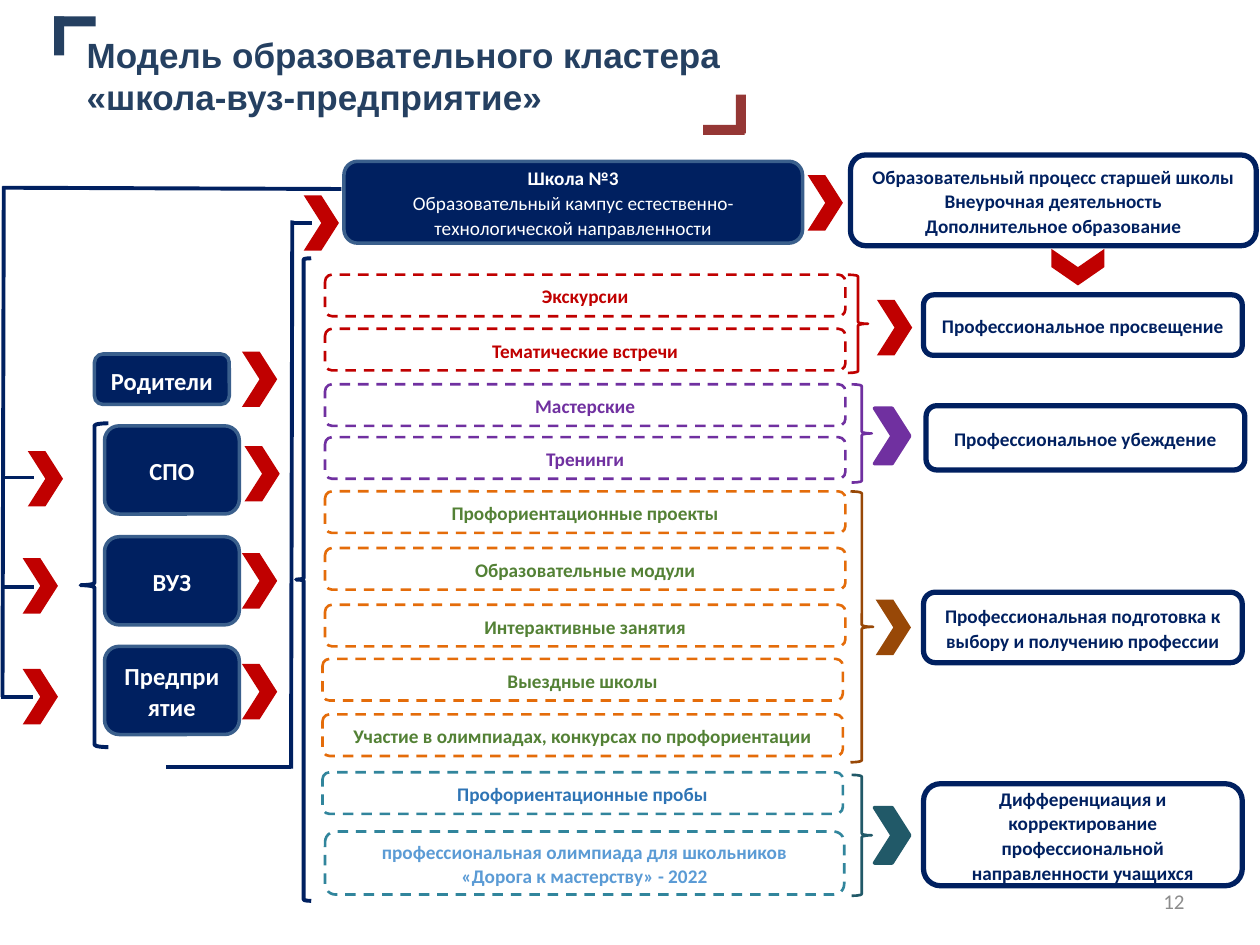
from pptx import Presentation
from pptx.dml.color import RGBColor
from pptx.enum.dml import MSO_LINE_DASH_STYLE as Dash
from pptx.enum.shapes import MSO_CONNECTOR, MSO_SHAPE as Shape
from pptx.enum.text import MSO_ANCHOR as Anchor, PP_ALIGN as Align
from pptx.oxml.ns import qn
from pptx.util import Inches, Pt

NAVY, BORDER, RED, PURPLE = "002060", "3A5F8C", "C00000", "7030A0"
ORANGE, BROWN, GREEN = "E46C0A", "984807", "538135"
TEAL, DARK_TEAL, BLUE, SKY = "31859C", "215968", "2E74B5", "5B9BD5"
WHITE, SLATE, MAROON, GRAY = "FFFFFF", "254061", "953735", "8C8C8C"

ACTIVITIES = [
    (2.58, 2.18, "Экскурсии", RED, RED),
    (2.58, 2.61, "Тематические встречи", RED, RED),
    (2.58, 3.05, "Мастерские", PURPLE, PURPLE),
    (2.58, 3.47, "Тренинги", PURPLE, PURPLE),
    (2.58, 3.9, "Профориентационные проекты", ORANGE, GREEN),
    (2.58, 4.35, "Образовательные модули", ORANGE, GREEN),
    (2.58, 4.8, "Интерактивные занятия", ORANGE, GREEN),
    (2.56, 5.23, "Выездные школы", ORANGE, GREEN),
    (2.56, 5.67, "Участие в олимпиадах, конкурсах по профориентации", ORANGE, GREEN),
    (2.56, 6.13, "Профориентационные пробы", TEAL, BLUE),
]
PARTNERS = [
    (0.75, 2.81, 0.4, "Родители"),
    (0.83, 3.38, 0.7, "СПО"),
    (0.83, 4.26, 0.7, "ВУЗ"),
    (0.83, 5.13, 0.7, "Предприятие"),
]
RESULTS = [
    (7.33, 2.34, 2.53, 0.48, ["Профессиональное просвещение"]),
    (7.35, 3.22, 2.53, 0.51, ["Профессиональное убеждение"]),
    (7.33, 4.7, 2.53, 0.56, ["Профессиональная подготовка к выбору и получению профессии"]),
    (7.33, 6.22, 2.53, 0.81,
     ["Дифференциация и корректирование профессиональной направленности учащихся"]),
    (6.75, 1.23, 3.22, 0.72, ["Образовательный процесс старшей школы",
                              "Внеурочная деятельность", "Дополнительное образование"]),
]
BRACES = [
    (Shape.LEFT_BRACE, 2.35, 2.05, 0.12, 5.1, NAVY, 2.25),
    (Shape.LEFT_BRACE, 0.64, 3.36, 0.22, 2.57, NAVY, 2.25),
    (Shape.RIGHT_BRACE, 6.73, 2.18, 0.16, 0.78, RED, 1.5),
    (Shape.RIGHT_BRACE, 6.76, 3.05, 0.16, 0.78, PURPLE, 1.5),
    (Shape.RIGHT_BRACE, 6.75, 3.9, 0.18, 2.15, BROWN, 1.5),
    (Shape.RIGHT_BRACE, 6.76, 6.15, 0.16, 0.96, DARK_TEAL, 1.5),
]
RED_CHEVRONS = [
    (1.92, 2.79), (1.94, 3.54), (1.92, 4.39), (1.92, 5.27), (0.22, 3.58),
    (0.18, 4.43), (0.18, 5.31), (2.41, 1.55), (6.41, 1.39), (6.96, 2.38),
]
LINES = [
    (0.03, 3.79, 0.27, 3.79), (0.02, 4.66, 0.27, 4.66), (0.01, 5.53, 0.26, 5.53),
    (2.71, 1.5, 0.02, 1.49), (0.03, 1.48, 0.02, 5.53), (1.32, 6.09, 2.31, 6.09),
    (2.32, 1.75, 2.31, 6.1), (2.31, 1.77, 2.48, 1.77),
]
CORNERS = [
    (0.43, 0.13, 0.08, 0.31, SLATE), (0.43, 0.13, 0.33, 0.08, SLATE),
    (5.84, 0.75, 0.08, 0.31, MAROON), (5.58, 0.99, 0.33, 0.08, MAROON),
]


def rgb(value):
    """Turn a hex string into a colour."""
    return RGBColor.from_string(value)


def write_text(box, lines, color, size=11, bold=True, font="Calibri",
               align=Align.CENTER, spacing=1.07, anchor=Anchor.MIDDLE, plain_from=None):
    """Write one paragraph per line, regular weight from index plain_from on."""
    frame = box.text_frame
    frame.word_wrap = True
    frame.vertical_anchor = anchor
    for index, line in enumerate(lines):
        para = frame.paragraphs[0] if index == 0 else frame.add_paragraph()
        para.alignment = align
        para.line_spacing = spacing
        span = para.add_run()
        span.text = line
        span.font.name = font
        span.font.size = Pt(size)
        span.font.bold = bold and (plain_from is None or index < plain_from)
        span.font.color.rgb = rgb(color)


def add_figure(page, kind, left, top, width, height, fill=None, line=None,
               weight=2, dashed=False):
    """Add a preset shape without shadow."""
    box = page.shapes.add_shape(kind, Inches(left), Inches(top), Inches(width), Inches(height))
    box.shadow.inherit = False
    if fill:
        box.fill.solid()
        box.fill.fore_color.rgb = rgb(fill)
    else:
        box.fill.background()
    if line:
        box.line.color.rgb = rgb(line)
        box.line.width = Pt(weight)
        if dashed:
            box.line.dash_style = Dash.DASH
    else:
        box.line.fill.background()
    return box


def add_card(page, left, top, width, height, lines, color, size=11, plain_from=None, **style):
    """Add a rounded box with centred text."""
    box = add_figure(page, Shape.ROUNDED_RECTANGLE, left, top, width, height, **style)
    write_text(box, lines, color, size=size, plain_from=plain_from)


def add_chevron(page, left, top, fill=RED, line=None, width=0.28, height=0.44, rotation=0):
    """Add a chevron arrow."""
    arrow = add_figure(page, Shape.CHEVRON, left, top, width, height, fill, line)
    arrow.rotation = rotation


def add_line(page, x1, y1, x2, y2):
    """Add a straight navy connector without shadow."""
    line = page.shapes.add_connector(
        MSO_CONNECTOR.STRAIGHT, Inches(x1), Inches(y1), Inches(x2), Inches(y2))
    line.line.color.rgb = rgb(NAVY)
    line.line.width = Pt(2.25)
    properties = line._element.spPr
    properties.append(properties.makeelement(qn("a:effectLst"), {}))


def add_label(page, left, top, width, height, text, color, **style):
    """Add a text box with one paragraph."""
    box = page.shapes.add_textbox(Inches(left), Inches(top), Inches(width), Inches(height))
    write_text(box, [text], color, spacing=1.0, **style)


def main():
    """Build the slide and save it."""
    deck = Presentation()
    deck.slide_width, deck.slide_height = Inches(10), Inches(7.5)
    page = deck.slides.add_slide(deck.slide_layouts[6])

    add_label(page, 0.59, 0.22, 5.8, 0.77,
              "Модель образовательного кластера «школа-вуз-предприятие»", SLATE,
              size=20, font="Arial", align=Align.LEFT, anchor=Anchor.TOP)
    for left, top, width, height, color in CORNERS:
        add_figure(page, Shape.RECTANGLE, left, top, width, height, color)

    for ends in LINES:
        add_line(page, *ends)
    for kind, left, top, width, height, color, weight in BRACES:
        add_figure(page, kind, left, top, width, height, line=color, weight=weight)

    add_card(page, 2.73, 1.28, 3.64, 0.65,
             ["Школа №3", "Образовательный кампус естественно-технологической направленности"],
             WHITE, plain_from=1, fill=NAVY, line=BORDER)
    for left, top, height, name in PARTNERS:
        add_card(page, left, top, 1.07, height, [name], WHITE, size=14, fill=NAVY, line=BORDER)
    for left, top, width, height, lines in RESULTS:
        add_card(page, left, top, width, height, lines, NAVY, line=NAVY, weight=3)
    for left, top, name, border, color in ACTIVITIES:
        add_card(page, left, top, 4.13, 0.33, [name], color,
                 line=border, weight=1.5, dashed=True)
    add_card(page, 2.58, 6.6, 4.12, 0.5,
             ["профессиональная олимпиада для школьников", "«Дорога к мастерству» - 2022"],
             SKY, line=TEAL, weight=1.5, dashed=True)

    for left, top in RED_CHEVRONS:
        add_chevron(page, left, top)
    add_chevron(page, 6.94, 3.24, PURPLE, PURPLE)
    add_chevron(page, 6.95, 4.76, BROWN)
    add_chevron(page, 6.94, 6.41, DARK_TEAL, DARK_TEAL)
    add_chevron(page, 8.41, 1.91, width=0.29, height=0.42, rotation=90)

    add_label(page, 7.17, 6.95, 2.33, 0.4, "12", GRAY, size=12, bold=False, align=Align.RIGHT)
    deck.save("out.pptx")


if __name__ == "__main__":
    main()
